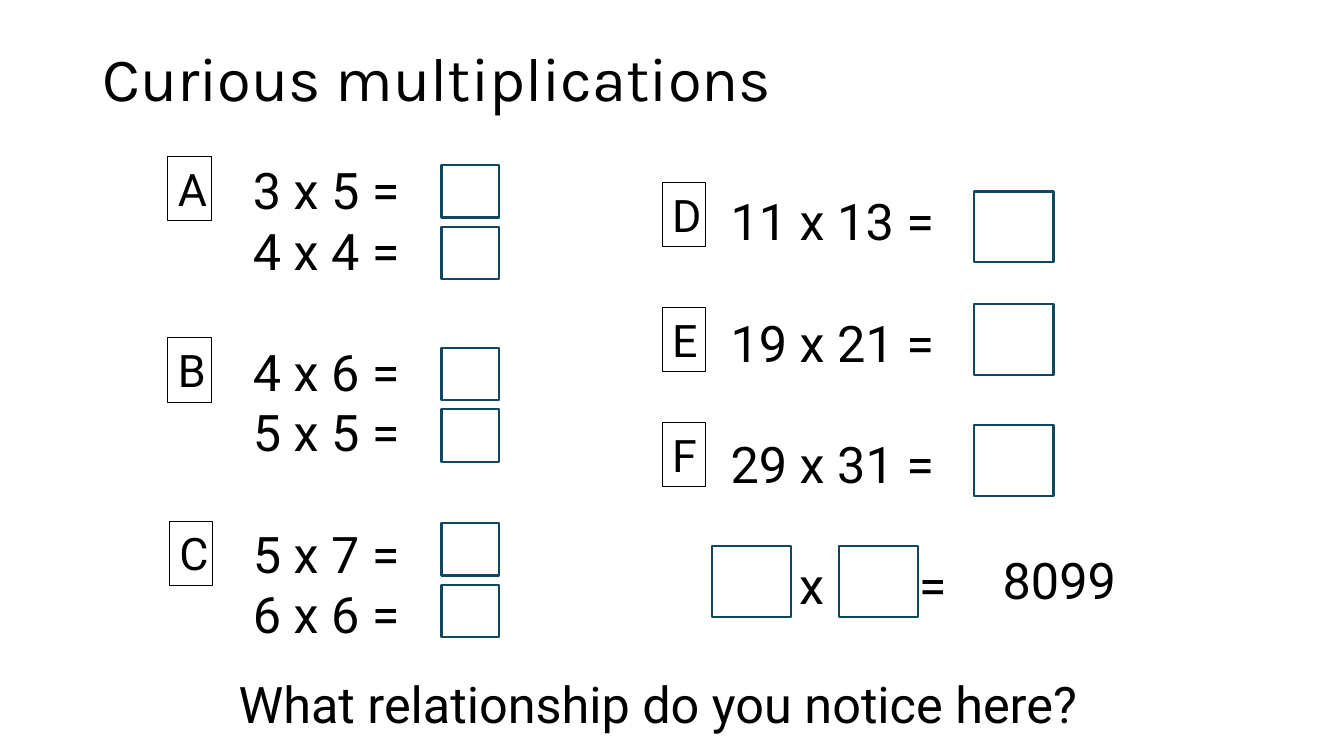
"""Build the "Curious multiplications" exercise slide."""
import dataclasses

import lxml.etree
import pptx
import pptx.dml.color
import pptx.enum.shapes
import pptx.enum.text
import pptx.oxml.ns
import pptx.util

Pt = pptx.util.Pt
Align = pptx.enum.text.PP_ALIGN
Anchor = pptx.enum.text.MSO_ANCHOR


@dataclasses.dataclass(frozen=True)
class Theme:
    ink: str = "000000"
    paper: str = "FFFFFF"
    answer_line: str = "104760"
    title_font: str = "Karla"
    body_font: str = "Roboto"
    title_size: float = 44
    body_size: float = 36
    label_size: float = 32
    group_gap: float = 43.4


class ExerciseSlide:
    def __init__(self, presentation, theme):
        self.theme = theme
        self.slide = presentation.slides.add_slide(presentation.slide_layouts[6])

    def color(self, value):
        return pptx.dml.color.RGBColor.from_string(value)

    def box(self, left, top, width, height, line=None, line_width=1.5):
        shape = self.slide.shapes.add_shape(
            pptx.enum.shapes.MSO_SHAPE.RECTANGLE, Pt(left), Pt(top), Pt(width), Pt(height))
        shape.shadow.inherit = False
        shape.fill.solid()
        shape.fill.fore_color.rgb = self.color(self.theme.paper)
        if line:
            shape.line.color.rgb = self.color(line)
            shape.line.width = Pt(line_width)
        else:
            shape.line.fill.background()
        return shape

    def set_text(self, shape, text, size, font=None, align=Align.LEFT, anchor=Anchor.TOP,
                 grow=True):
        frame = shape.text_frame
        frame.text = text
        frame.word_wrap = True
        frame.vertical_anchor = anchor
        if grow:
            frame.auto_size = pptx.enum.text.MSO_AUTO_SIZE.SHAPE_TO_FIT_TEXT
        for paragraph in frame.paragraphs:
            paragraph.alignment = align
            for run in paragraph.runs:
                run.font.name = font or self.theme.body_font
                run.font.size = Pt(size)
                run.font.color.rgb = self.color(self.theme.ink)
        return frame.paragraphs

    def title(self, text):
        shape = self.slide.shapes.add_textbox(Pt(66), Pt(28.8), Pt(828), Pt(59))
        paragraphs = self.set_text(shape, text, self.theme.title_size, self.theme.title_font,
                                   anchor=Anchor.MIDDLE, grow=False)
        paragraphs[0].line_spacing = 0.9

    def sums(self, left, top, width, height, groups):
        lines = [line for group in groups for line in group]
        paragraphs = self.set_text(self.box(left, top, width, height), "\n".join(lines),
                                   self.theme.body_size)
        first = 0
        for group in groups[:-1]:
            first += len(group)
            paragraphs[first].space_before = Pt(self.theme.group_gap)
        return paragraphs

    def tab_stops(self, paragraph, positions):
        properties = paragraph._p.get_or_add_pPr()
        tabs = lxml.etree.SubElement(properties, pptx.oxml.ns.qn("a:tabLst"))
        for position in positions:
            lxml.etree.SubElement(tabs, pptx.oxml.ns.qn("a:tab"),
                                  pos=str(int(Pt(position))), algn="l")

    def label(self, letter, left, top):
        shape = self.box(left, top, 31, 46, self.theme.ink, 0.75)
        self.set_text(shape, letter, self.theme.label_size)

    def small_answer(self, top):
        self.box(315.4, top, 41, 37.4, self.theme.answer_line)

    def large_answer(self, left, top):
        self.box(left, top, 57, 50.6, self.theme.answer_line)


def main():
    presentation = pptx.Presentation()
    presentation.slide_width = Pt(960)
    presentation.slide_height = Pt(540)
    theme = Theme()
    page = ExerciseSlide(presentation, theme)

    page.title("Curious multiplications")
    page.sums(173.5, 110.2, 226.8, 356.4, [
        ("3 x 5 =", "4 x 4 ="), ("4 x 6 =", "5 x 5 ="), ("5 x 7 =", "6 x 6 =")])
    paragraphs = page.sums(514.8, 132.5, 226.8, 312.5, [
        ("11 x 13 =",), ("19 x 21 =",), ("29 x 31 =",), ("\tx\t=",)])
    page.tab_stops(paragraphs[-1], (49, 134.5))

    for letter, left, top, answer_top in (
            ("A", 120, 111.6, 118), ("B", 120, 241.2, 248.4), ("C", 121, 372.2, 373.7)):
        page.label(letter, left, top)
        for row in range(2):
            page.small_answer(answer_top + row * 44)

    for letter, top, answer_top in (
            ("D", 130.3, 136.8), ("E", 219.6, 217.4), ("F", 301.7, 303.8)):
        page.label(letter, 473, top)
        page.large_answer(695.5, answer_top)

    for left in (508.3, 599):
        page.large_answer(left, 390)
    product = page.box(692.6, 388.8, 128.2, 50.4, theme.paper)
    page.set_text(product, "8099", theme.body_size, align=Align.CENTER,
                  anchor=Anchor.MIDDLE, grow=False)

    question = page.box(163.4, 477.4, 657.4, 51)
    page.set_text(question, "What relationship do you notice here?", theme.body_size)
    presentation.save("out.pptx")


if __name__ == "__main__":
    main()
